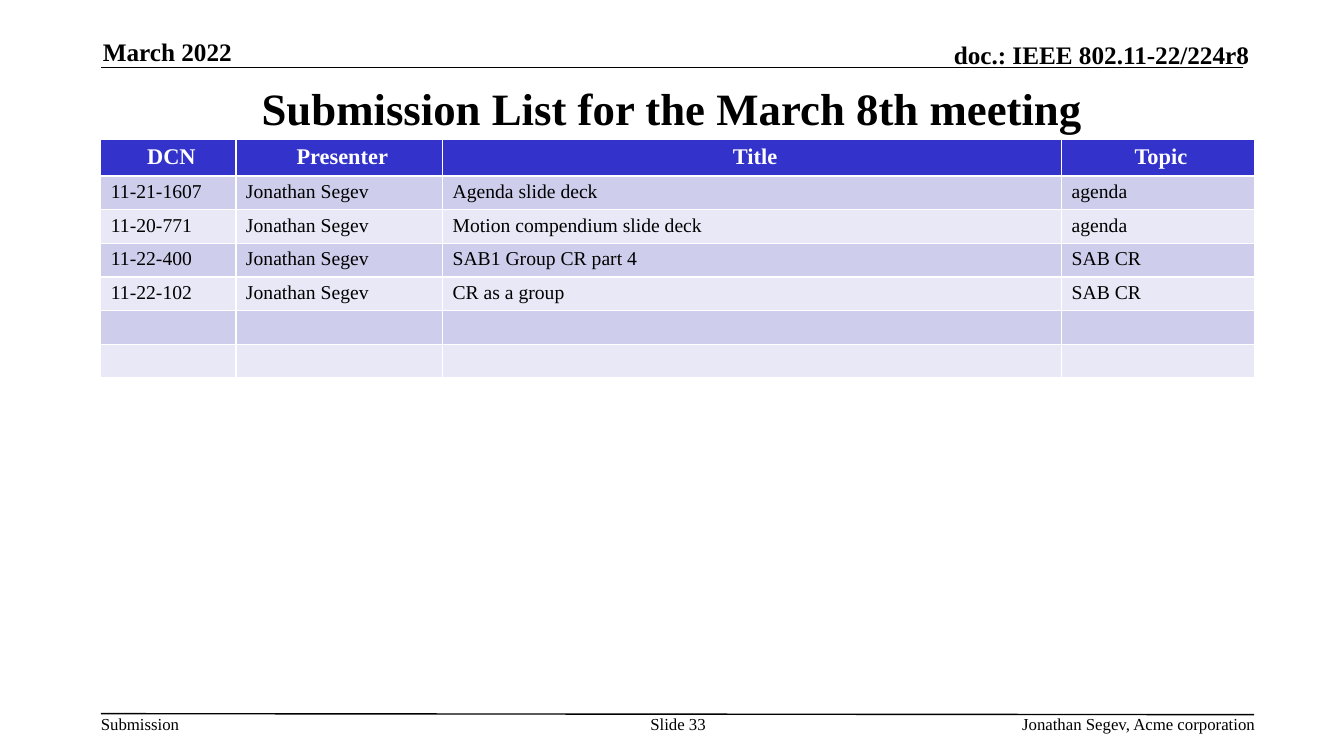
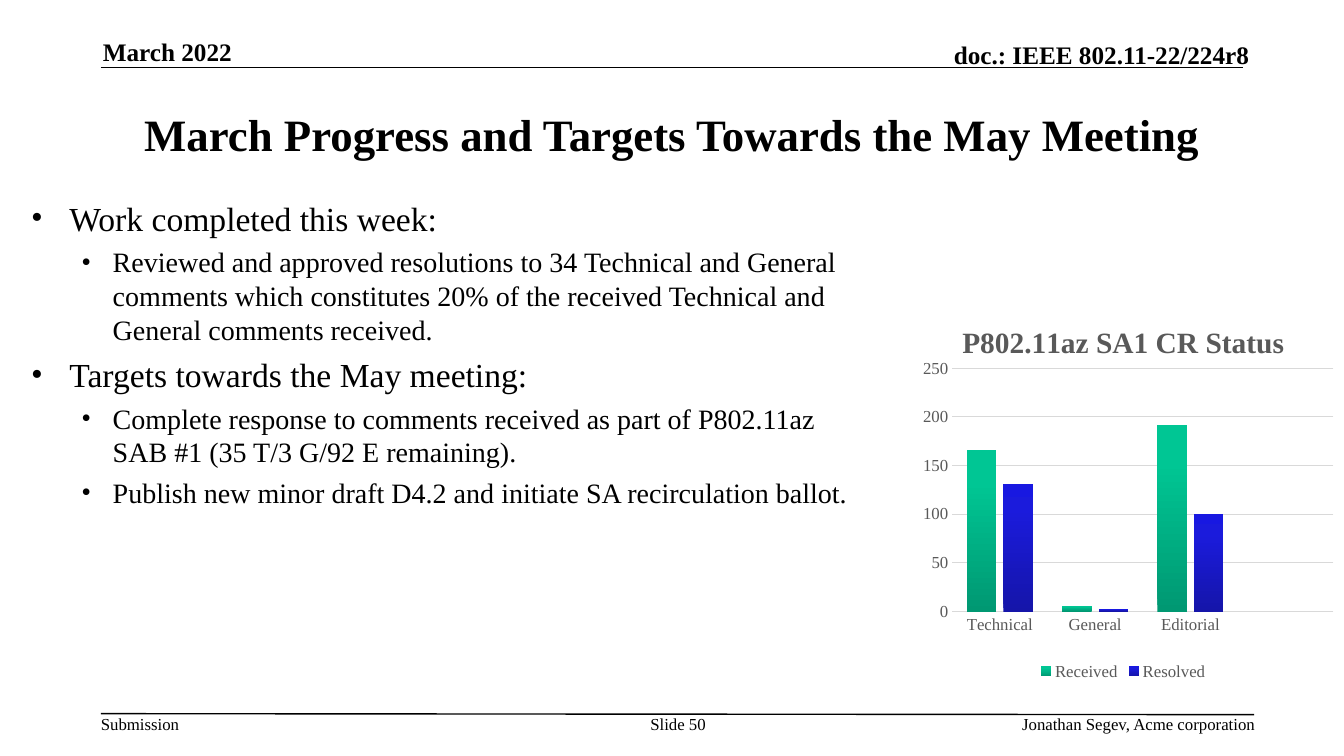
"""Build two meeting slides: a submission list and a progress report."""
from pptx import Presentation
from pptx.chart.data import CategoryChartData
from pptx.dml.color import RGBColor
from pptx.enum import chart as ch, shapes, text
from pptx.oxml import parse_xml
from pptx.oxml.ns import nsdecls, qn
from pptx.util import Inches, Pt

FONT = "Times New Roman"
HUES = {"ink": "000000", "paper": "FFFFFF", "head": "3333CC", "odd": "CECEEC",
        "even": "E8E8F6", "gray": "595959", "grid": "D9D9D9"}
LEFT, MID, RIGHT = text.PP_ALIGN.LEFT, text.PP_ALIGN.CENTER, text.PP_ALIGN.RIGHT
TOP, CORE, BASE = text.MSO_ANCHOR.TOP, text.MSO_ANCHOR.MIDDLE, text.MSO_ANCHOR.BOTTOM

RULES = [(1, 0.67, 12.33, 0.67), (1, 7.08, 12.44, 7.09)]
MARKS = [
    ("March 2022", (1.02, 0.36, 2.73, 0.3), 18, True, LEFT, BASE),
    ("doc.: IEEE 802.11-22/224r8", (7.29, 0.39, 5.1, 0.3), 18, True, RIGHT, BASE),
    ("Submission", (1, 7.08, 0.79, 0.2), 12, False, LEFT, TOP),
    ("Jonathan Segev, Acme corporation", (7.81, 7.08, 4.64, 0.2), 12, False, RIGHT, TOP),
]
COLS = [1.34, 2.05, 6.14, 1.91]
ROWS = [
    ("DCN", "Presenter", "Title", "Topic"),
    ("11-21-1607", "Jonathan Segev", "Agenda slide deck", "agenda"),
    ("11-20-771", "Jonathan Segev", "Motion compendium slide deck", "agenda"),
    ("11-22-400", "Jonathan Segev", "SAB1 Group CR part 4", "SAB CR"),
    ("11-22-102", "Jonathan Segev", "CR as a group", "SAB CR"),
    ("", "", "", ""),
    ("", "", "", ""),
]
POINTS = [
    (0, "Work completed this week:"),
    (1, "Reviewed and approved resolutions to 34 Technical and General comments "
        "which constitutes 20% of the received Technical and General comments received."),
    (0, "Targets towards the May meeting:"),
    (1, "Complete response to comments received as part of P802.11az SAB #1 "
        "(35 T/3 G/92 E remaining)."),
    (1, "Publish new minor draft D4.2 and initiate SA recirculation ballot."),
]
LEVELS = [(24, 6, 0.38, -0.38), (20, 5, 0.81, -0.31)]
CATS = ["Technical", "General", "Editorial", ""]
SERIES = [
    ("Received", [166, 6, 192, None], ["009872", "00C694", "00C795"]),
    ("Resolved", [131, 3, 100, None], ["1515A9", "1B1BDC", "1818E1"]),
]
STOPS = [0, 80, 100]
PLOT = {"x": 0.113, "y": 0.166, "w": 0.863, "h": 0.642}


def rgb(hue):
    return RGBColor.from_string(HUES[hue])


def style(font, size, hue="ink", bold=False):
    font.name, font.size, font.bold = FONT, Pt(size), bold
    font.color.rgb = rgb(hue)


def write(par, words, size, hue="ink", bold=False, align=LEFT):
    par.alignment = align
    run = par.add_run()
    run.text = words
    style(run.font, size, hue, bold)


def frame(slide, at, anchor=TOP, pad=(0, 0)):
    box = slide.shapes.add_textbox(*map(Inches, at)).text_frame
    box.word_wrap, box.vertical_anchor = True, anchor
    box.margin_left = box.margin_right = Inches(pad[0])
    box.margin_top = box.margin_bottom = Inches(pad[1])
    return box


def label(slide, words, at, size, bold, align, anchor, pad=(0, 0)):
    box = frame(slide, at, anchor, pad)
    write(box.paragraphs[0], words, size, bold=bold, align=align)


def start(deck, title, tall, num):
    slide = deck.slides.add_slide(deck.slide_layouts[6])
    for ends in RULES:
        rule = slide.shapes.add_connector(shapes.MSO_CONNECTOR.STRAIGHT, *map(Inches, ends))
        rule.line.color.rgb, rule.line.width = rgb("ink"), Pt(1)
        rule._element.spPr.append(parse_xml(f"<a:effectLst {nsdecls('a')}/>"))
    for mark in MARKS:
        label(slide, *mark)
    label(slide, f"Slide {num}", (6.34, 7.08, 0.77, 0.4), 12, False, MID, TOP)
    label(slide, title, (1, 0.75, 11.33, tall), 32, True, MID, CORE, (0.1, 0.05))
    return slide


def add_list(slide):
    area = (1, 1.38, sum(COLS), 0.34 + 0.31 * (len(ROWS) - 1))
    table = slide.shapes.add_table(len(ROWS), len(COLS), *map(Inches, area)).table
    for col, wide in zip(table.columns, COLS):
        col.width = Inches(wide)
    for r, row in enumerate(ROWS):
        head = r == 0
        table.rows[r].height = Inches(0.34 if head else 0.31)
        for c, words in enumerate(row):
            cell = table.cell(r, c)
            cell.fill.solid()
            cell.fill.fore_color.rgb = rgb("head" if head else "odd" if r % 2 else "even")
            par = cell.text_frame.paragraphs[0]
            if head:
                cell.margin_right = Inches(0.04)
                write(par, words, 16, "paper", True, MID)
            elif words:
                write(par, words, 14)
            else:
                par._p.get_or_add_endParaRPr().set("sz", "1400")


def add_points(slide):
    box = frame(slide, (0.21, 1.91, 8.35, 4.75), pad=(0.1, 0.05))
    for i, (level, words) in enumerate(POINTS):
        par = box.add_paragraph() if i else box.paragraphs[0]
        size, gap, left, hang = LEVELS[level]
        write(par, words, size)
        par.level, par.space_before = level, Pt(gap)
        props = par._p.get_or_add_pPr()
        props.set("marL", str(Inches(left)))
        props.set("indent", str(Inches(hang)))
        props.append(parse_xml(f'<a:buFont {nsdecls("a")} typeface="{FONT}"/>'))
        props.append(parse_xml(f'<a:buChar {nsdecls("a")} char="•"/>'))


def shade(ser, hues):
    ser.format.fill.gradient()
    old = ser._element.find(".//" + qn("a:gradFill"))
    stops = "".join(f'<a:gs pos="{pos * 1000}"><a:srgbClr val="{hue}"/></a:gs>'
                    for pos, hue in zip(STOPS, hues))
    old.getparent().replace(old, parse_xml(
        f'<a:gradFill {nsdecls("a")} rotWithShape="1"><a:gsLst>{stops}</a:gsLst>'
        '<a:lin ang="16200000" scaled="0"/></a:gradFill>'))


def place(chart):
    area = chart._chartSpace.chart.plotArea
    for old in area.findall(qn("c:layout")):
        area.remove(old)
    modes = "".join(f'<c:{k}Mode val="edge"/>' for k in "xy")
    sizes = "".join(f'<c:{k} val="{v}"/>' for k, v in PLOT.items())
    area.insert(0, parse_xml(
        f'<c:layout {nsdecls("c")}><c:manualLayout><c:layoutTarget val="inner"/>'
        f'{modes}{sizes}</c:manualLayout></c:layout>'))


def add_bars(slide):
    data = CategoryChartData()
    data.categories = CATS
    for name, vals, _ in SERIES:
        data.add_series(name, vals)
    chart = slide.shapes.add_chart(ch.XL_CHART_TYPE.COLUMN_CLUSTERED,
                                   *map(Inches, (8.95, 3.03, 4.38, 3.76)), data).chart
    style(chart.font, 10)
    chart.has_title = True
    write(chart.chart_title.text_frame.paragraphs[0], "P802.11az SA1 CR Status",
          21, "gray", True, MID)
    chart.chart_title.include_in_layout = False
    chart.has_legend = True
    chart.legend.position = ch.XL_LEGEND_POSITION.BOTTOM
    chart.legend.include_in_layout = False
    style(chart.legend.font, 12, "gray")
    cats, vals = chart.category_axis, chart.value_axis
    for axis in (cats, vals):
        axis.major_tick_mark = axis.minor_tick_mark = ch.XL_TICK_MARK.NONE
        style(axis.tick_labels.font, 12, "gray")
    cats.format.line.color.rgb, cats.format.line.width = rgb("grid"), Pt(1)
    vals.format.line.fill.background()
    vals.minimum_scale, vals.maximum_scale, vals.major_unit = 0, 250, 50
    grid = vals.major_gridlines.format.line
    grid.color.rgb, grid.width = rgb("grid"), Pt(0.75)
    plot = chart.plots[0]
    plot.gap_width, plot.overlap, plot.vary_by_categories = 100, -24, False
    for ser, (_, _, hues) in zip(plot.series, SERIES):
        shade(ser, hues)
    place(chart)


def main():
    deck = Presentation()
    deck.slide_width, deck.slide_height = Inches(13.33), Inches(7.5)
    add_list(start(deck, "Submission List for the March 8th meeting", 0.64, 33))
    slide = start(deck, "March Progress and Targets Towards the May Meeting", 1.16, 50)
    add_points(slide)
    add_bars(slide)
    deck.save("out.pptx")


if __name__ == "__main__":
    main()
